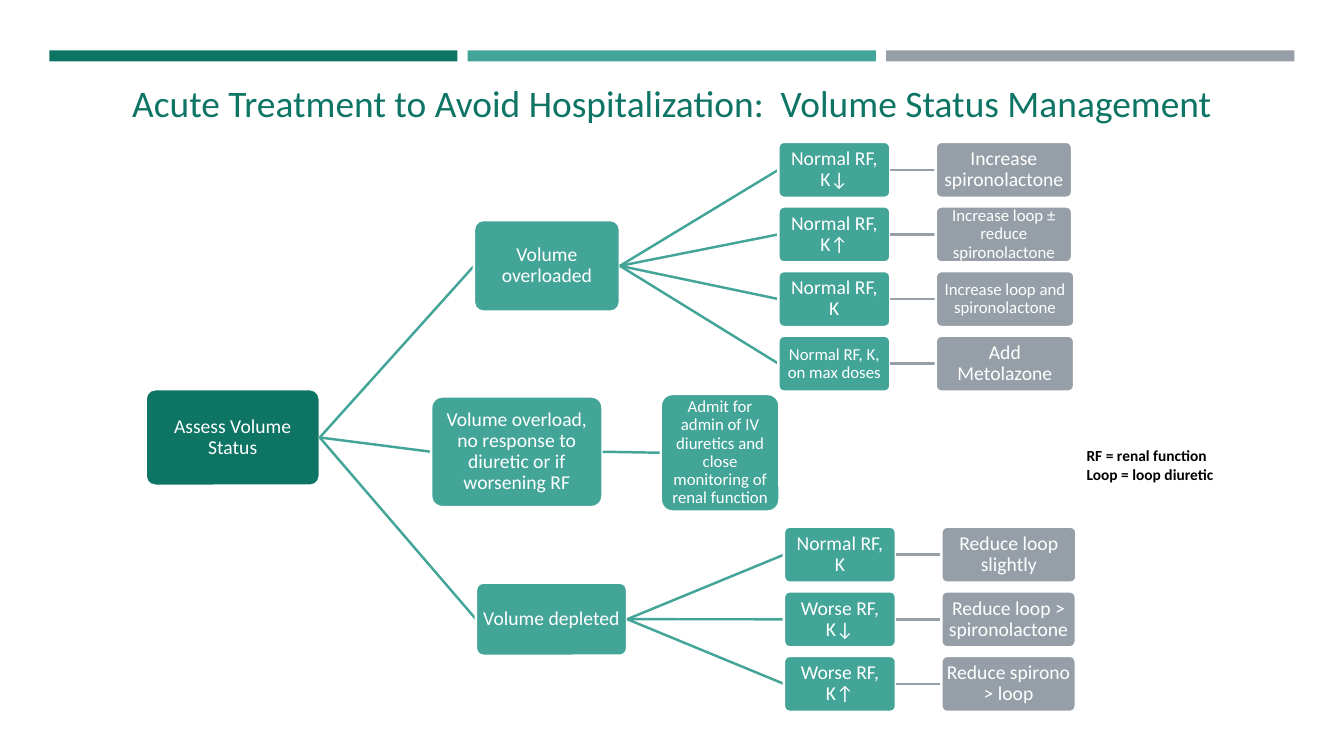
from lxml.etree import SubElement
from pptx import Presentation
from pptx.dml.color import RGBColor
from pptx.enum.shapes import MSO_CONNECTOR, MSO_SHAPE
from pptx.enum.text import MSO_ANCHOR, PP_ALIGN
from pptx.oxml.ns import qn
from pptx.util import Pt

DARK, TEAL, GRAY, WHITE, BLACK = "0E7565", "43A598", "969FA7", "FFFFFF", "000000"
LEFT_SITE, RIGHT_SITE = 1, 3
ROW_PITCH, ROW_HEIGHT = 46.15, 40
CONDITION_WIDTH, OUTCOME_OFFSET = 80, 112.4

OVERLOADED_ROWS = [
    ("Normal RF, K↓", 14, "Increase spironolactone", 14, 97.4),
    ("Normal RF, K↑", 14, "Increase loop ± reduce spironolactone", 12, 97.4),
    ("Normal RF, K", 14, "Increase loop and spironolactone", 12, 99),
    ("Normal RF, K, on max doses", 12, "Add Metolazone", 14, 98.8),
]
DEPLETED_ROWS = [
    ("Normal RF, K", 14, "Reduce loop slightly", 14, 96.4),
    ("Worse RF, K↓", 14, "Reduce loop > spironolactone", 14, 96),
    ("Worse RF, K↑", 14, "Reduce spirono > loop", 14, 96),
]


def color(hex_value):
    return RGBColor.from_string(hex_value)


def apply_format(target, values):
    for name, value in values.items():
        setattr(target, name, value)


def write_text(shape, lines, size, hex_value, align, anchor, spacing=1.0, bold=False, inset=None):
    frame = shape.text_frame
    apply_format(frame, {"text": "\n".join(lines), "word_wrap": True, "vertical_anchor": anchor})
    if inset is not None:
        sides = ("left", "right", "top", "bottom")
        apply_format(frame, {f"margin_{side}": Pt(inset) for side in sides})
    for paragraph in frame.paragraphs:
        apply_format(paragraph, {"alignment": align, "line_spacing": spacing})
        apply_format(paragraph.font, {"name": "Calibri", "size": Pt(size), "bold": bold})
        paragraph.font.color.rgb = color(hex_value)


def add_block(slide, kind, bounds, fill):
    shape = slide.shapes.add_shape(kind, *map(Pt, bounds))
    shape.shadow.inherit = False
    shape.fill.solid()
    shape.fill.fore_color.rgb = color(fill)
    shape.line.fill.background()
    return shape


def add_node(slide, text, bounds, fill, size=14, inset=2):
    node = add_block(slide, MSO_SHAPE.ROUNDED_RECTANGLE, bounds, fill)
    node.adjustments[0] = 0.1
    node.line.color.rgb = color(WHITE)
    node.line.width = Pt(1.75)
    write_text(node, [text], size, WHITE, PP_ALIGN.CENTER, MSO_ANCHOR.MIDDLE, 0.9, inset=inset)
    return node


def add_child(slide, parent, text, bounds, fill, size=14, inset=2):
    connector = slide.shapes.add_connector(MSO_CONNECTOR.STRAIGHT, 0, 0, 0, 0)
    connector.line.color.rgb = color(fill)
    connector.line.width = Pt(1.75)
    SubElement(connector._element.spPr, qn("a:effectLst"))
    child = add_node(slide, text, bounds, fill, size, inset)
    connector.begin_connect(parent, RIGHT_SITE)
    connector.end_connect(child, LEFT_SITE)
    return child


def add_rows(slide, parent, rows, left, top):
    for index, (condition, condition_size, outcome, outcome_size, outcome_width) in enumerate(rows):
        row_top = top + index * ROW_PITCH
        condition_node = add_child(
            slide, parent, condition, (left, row_top, CONDITION_WIDTH, ROW_HEIGHT),
            TEAL, condition_size, inset=3)
        add_child(
            slide, condition_node, outcome,
            (left + OUTCOME_OFFSET, row_top, outcome_width, ROW_HEIGHT), GRAY, outcome_size)


def add_title(slide, text):
    title = slide.shapes.title
    apply_format(title, {"left": Pt(35.3), "top": Pt(44), "width": Pt(890), "height": Pt(49)})
    write_text(title, [text], 26.7, DARK, PP_ALIGN.CENTER, MSO_ANCHOR.BOTTOM)


def add_legend(slide, lines):
    legend = add_block(slide, MSO_SHAPE.ROUNDED_RECTANGLE, (764, 280, 169, 104), WHITE)
    write_text(legend, lines, 11, BLACK, PP_ALIGN.LEFT, MSO_ANCHOR.MIDDLE, bold=True)


def main():
    presentation = Presentation()
    apply_format(presentation, {"slide_width": Pt(960), "slide_height": Pt(540)})
    slide = presentation.slides.add_slide(presentation.slide_layouts[5])

    for index, fill in enumerate((DARK, TEAL, GRAY)):
        add_block(slide, MSO_SHAPE.RECTANGLE, (35.2 + index * 298.9, 36, 291.6, 7.8), fill)
    add_title(slide, "Acute Treatment to Avoid Hospitalization:  Volume Status Management")

    root = add_node(slide, "Assess Volume Status", (104, 278, 124.4, 69), DARK)
    overloaded = add_child(slide, root, "Volume overloaded", (338.6, 157.2, 104.2, 65.4), TEAL)
    add_rows(slide, overloaded, OVERLOADED_ROWS, 556, 101.3)
    unresponsive = add_child(
        slide, root, "Volume overload, no response to diuretic or if worsening RF",
        (308, 283.2, 122.4, 79), TEAL)
    add_child(
        slide, unresponsive,
        "Admit for admin of IV diuretics and close monitoring of renal function",
        (472, 281.4, 84.8, 84), TEAL, 12)
    depleted = add_child(slide, root, "Volume depleted", (340, 416.2, 108, 52.2), TEAL)
    add_rows(slide, depleted, DEPLETED_ROWS, 560, 376.2)

    add_legend(slide, ["RF = renal function", "Loop = loop diuretic"])
    presentation.save("out.pptx")


if __name__ == "__main__":
    main()
